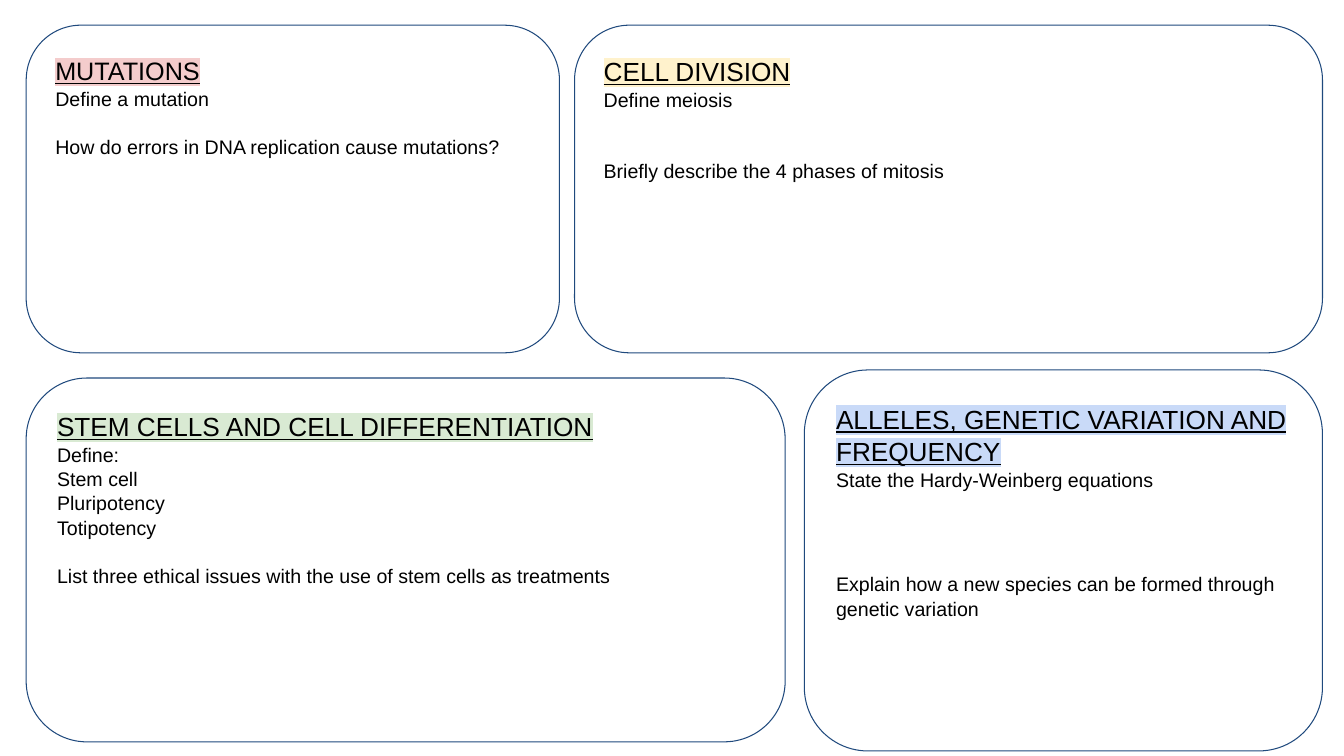
from lxml.etree import SubElement
from pptx import Presentation
from pptx.dml.color import RGBColor as Rgb
from pptx.enum.shapes import MSO_SHAPE as Shape
from pptx.enum.text import MSO_ANCHOR as Anchor, PP_ALIGN as Align
from pptx.oxml.ns import qn
from pptx.util import Pt

NAVY = "1F497D"
BLACK = "000000"
PANELS = [
    ((18.72, 18, 380.88, 234), "MUTATIONS", 18, "F4CCCC", [
        ("Define a mutation", 0),
        ("How do errors in DNA replication cause mutations?", 16.8)]),
    ((18.72, 270, 542.16, 259.92), "STEM CELLS AND CELL DIFFERENTIATION", 18.7, "D9EAD3", [
        ("Define:", 0),
        ("Stem cell", 0),
        ("Pluripotency", 0),
        ("Totipotency", 0),
        ("List three ethical issues with the use of stem cells as treatments", 16.8)]),
    ((410.4, 18, 534.24, 234), "CELL DIVISION", 18.7, "FFF2CC", [
        ("Define meiosis", 0),
        ("Briefly describe the 4 phases of mitosis", 33.6)]),
    ((574.56, 264.24, 370.08, 272.16), "ALLELES, GENETIC VARIATION AND FREQUENCY", 18.7, "C9DAF8", [
        ("State the Hardy-Weinberg equations", 0),
        ("Explain how a new species can be formed through genetic variation", 57)]),
]


def color(code):
    return Rgb.from_string(code)


def add_run(para, text, size):
    run = para.add_run()
    run.text = text
    run.font.name = "Arial"
    run.font.size = Pt(size)
    run.font.color.rgb = color(BLACK)
    return run


def mark(run, code):
    run.font.underline = True
    props = run.font._element
    light = SubElement(props, qn("a:highlight"))
    SubElement(light, qn("a:srgbClr"), val=code)
    props.find(qn("a:solidFill")).addnext(light)


def set_para(para, gap=0):
    para.alignment = Align.LEFT
    para.line_spacing = 1.04
    para.space_before = Pt(gap)
    return para


def add_panel(slide, box, title, size, tint, lines):
    panel = slide.shapes.add_shape(Shape.ROUNDED_RECTANGLE, *map(Pt, box))
    panel.shadow.inherit = False
    panel.adjustments[0] = 0.167
    panel.fill.background()
    panel.line.color.rgb = color(NAVY)
    panel.line.width = Pt(0.75)
    frame = panel.text_frame
    frame.word_wrap = True
    frame.vertical_anchor = Anchor.TOP
    frame.margin_left = frame.margin_right = Pt(9.36)
    frame.margin_top = frame.margin_bottom = Pt(9.36)
    mark(add_run(set_para(frame.paragraphs[0]), title, size), tint)
    for text, gap in lines:
        add_run(set_para(frame.add_paragraph(), gap), text, 14)


def main():
    deck = Presentation()
    deck.slide_width = Pt(960)
    deck.slide_height = Pt(540)
    slide = deck.slides.add_slide(deck.slide_layouts[6])
    for panel in PANELS:
        add_panel(slide, *panel)
    deck.save("out.pptx")


if __name__ == "__main__":
    main()
